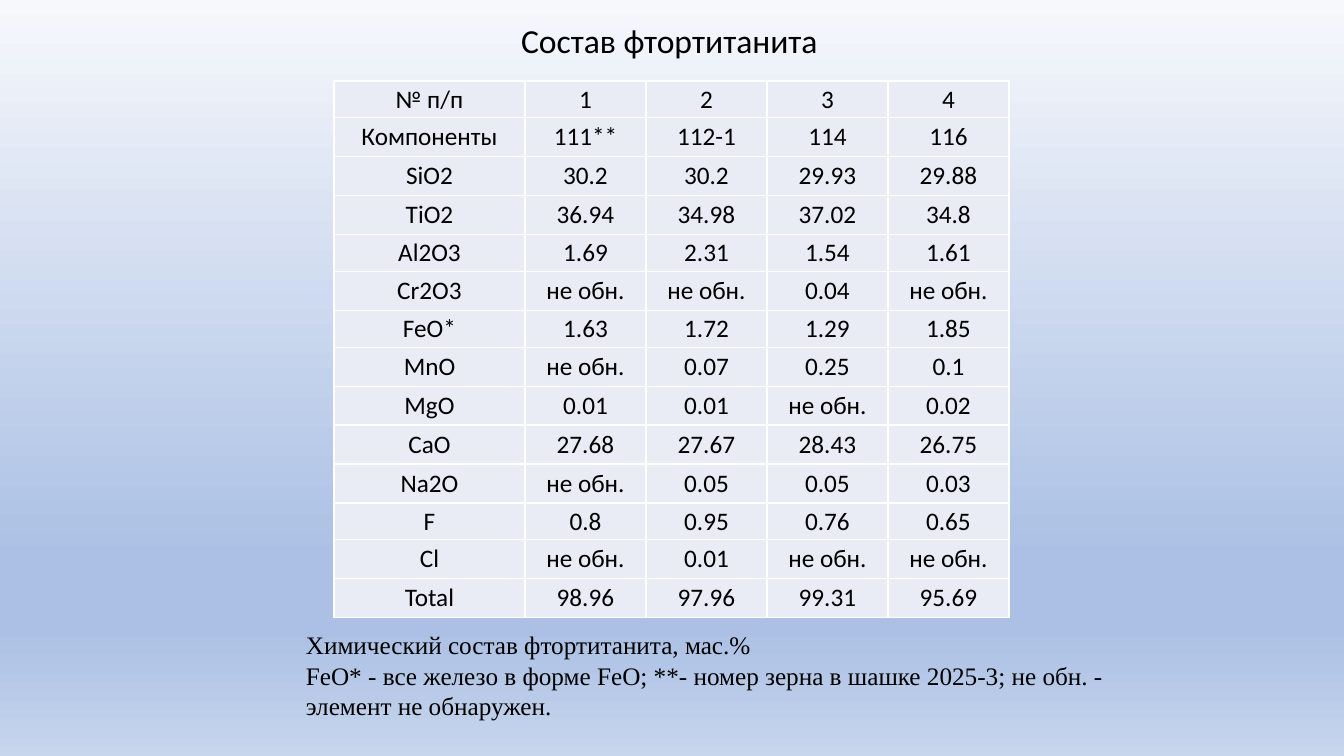
import copy
import pptx
import pptx.dml.color
import pptx.enum.text
import pptx.oxml
import pptx.oxml.ns
import pptx.util

PX = 914400 / 100.8
COLORS = {"text": "000000", "cell": "E9EBF5", "border": "FFFFFF"}
BACKGROUND_STOPS = [(0, "F6F8FC"), (0.74, "ABC0E4"), (0.83, "ABC0E4"), (1, "C7D5ED")]
MIDDLE = pptx.enum.text.MSO_ANCHOR.MIDDLE
ALIGN = pptx.enum.text.PP_ALIGN


def px(length):
    return pptx.util.Emu(round(length * PX))


def write(paragraph, text, size, font, align):
    paragraph.alignment = align
    run = paragraph.add_run()
    run.text = text
    run.font.size = pptx.util.Pt(size)
    run.font.name = font
    run.font.color.rgb = pptx.dml.color.RGBColor.from_string(COLORS["text"])


presentation = pptx.Presentation()
presentation.slide_width, presentation.slide_height = px(1344), px(756)
slide = presentation.slides.add_slide(presentation.slide_layouts[5])

# Background gradient
background = slide.background.fill
background.gradient()
background.gradient_angle = 270
stop_list = slide.element.find(".//" + pptx.oxml.ns.qn("a:gsLst"))
while len(stop_list) < len(BACKGROUND_STOPS):
    stop_list.append(copy.deepcopy(stop_list[0]))
for stop, (position, color) in zip(background.gradient_stops, BACKGROUND_STOPS):
    stop.position = position
    stop.color.rgb = pptx.dml.color.RGBColor.from_string(color)

# Title
title = slide.shapes.title
title.left, title.top, title.width, title.height = px(511), px(14), px(323), px(58)
title.text_frame.auto_size = pptx.enum.text.MSO_AUTO_SIZE.NONE
title.text_frame.vertical_anchor = MIDDLE
heading = title.text_frame.paragraphs[0]
heading.line_spacing = 0.9
write(heading, "Состав фтортитанита", 24, "Calibri", ALIGN.LEFT)

# Composition table
ABSENT = "не обн."
analyses = [
    ("№ п/п", "1", "2", "3", "4"),
    ("Компоненты", "111**", "112-1", "114", "116"),
    ("SiO2", "30.2", "30.2", "29.93", "29.88"),
    ("TiO2", "36.94", "34.98", "37.02", "34.8"),
    ("Al2O3", "1.69", "2.31", "1.54", "1.61"),
    ("Cr2O3", ABSENT, ABSENT, "0.04", ABSENT),
    ("FeO*", "1.63", "1.72", "1.29", "1.85"),
    ("MnO", ABSENT, "0.07", "0.25", "0.1"),
    ("MgO", "0.01", "0.01", ABSENT, "0.02"),
    ("CaO", "27.68", "27.67", "28.43", "26.75"),
    ("Na2O", ABSENT, "0.05", "0.05", "0.03"),
    ("F", "0.8", "0.95", "0.76", "0.65"),
    ("Cl", ABSENT, "0.01", ABSENT, ABSENT),
    ("Total", "98.96", "97.96", "99.31", "95.69"),
]
LOW_ROWS = {"№ п/п", "Al2O3", "FeO*", "F"}
column_widths = [191] + [121] * 4
row_heights = [36 if row[0] in LOW_ROWS else 39 for row in analyses]
composition = slide.shapes.add_table(
    len(analyses), len(column_widths), px(334), px(81),
    px(sum(column_widths)), px(sum(row_heights))).table
composition.first_row = composition.horz_banding = False
for column, width in zip(composition.columns, column_widths):
    column.width = px(width)
for table_row, height, values in zip(composition.rows, row_heights, analyses):
    table_row.height = px(height)
    for cell, value in zip(table_row.cells, values):
        cell.margin_left = cell.margin_right = px(6)
        cell.margin_top = cell.margin_bottom = px(3)
        cell.vertical_anchor = MIDDLE
        write(cell.text_frame.paragraphs[0], value, 18, "Calibri", ALIGN.CENTER)
        cell.fill.solid()
        cell.fill.fore_color.rgb = pptx.dml.color.RGBColor.from_string(COLORS["cell"])
        properties = cell._tc.get_or_add_tcPr()
        for index, side in enumerate("LRTB"):
            properties.insert(index, pptx.oxml.parse_xml(
                f'<a:ln{side} {pptx.oxml.ns.nsdecls("a")} w="12700"><a:solidFill>'
                f'<a:srgbClr val="{COLORS["border"]}"/></a:solidFill></a:ln{side}>'))

# Caption under the table
caption = slide.shapes.add_textbox(px(296), px(624), px(886), px(102)).text_frame
caption.word_wrap = True
caption.auto_size = pptx.enum.text.MSO_AUTO_SIZE.SHAPE_TO_FIT_TEXT
caption.vertical_anchor = MIDDLE
caption_lines = [
    "Химический состав фтортитанита, мас.%",
    "FeO* - все железо в форме FeO; **- номер зерна в шашке 2025-3; "
    "не обн. - элемент не обнаружен.",
]
caption.add_paragraph()
for paragraph, line in zip(caption.paragraphs, caption_lines):
    write(paragraph, line, 18, "Times New Roman", ALIGN.LEFT)

presentation.save("out.pptx")
